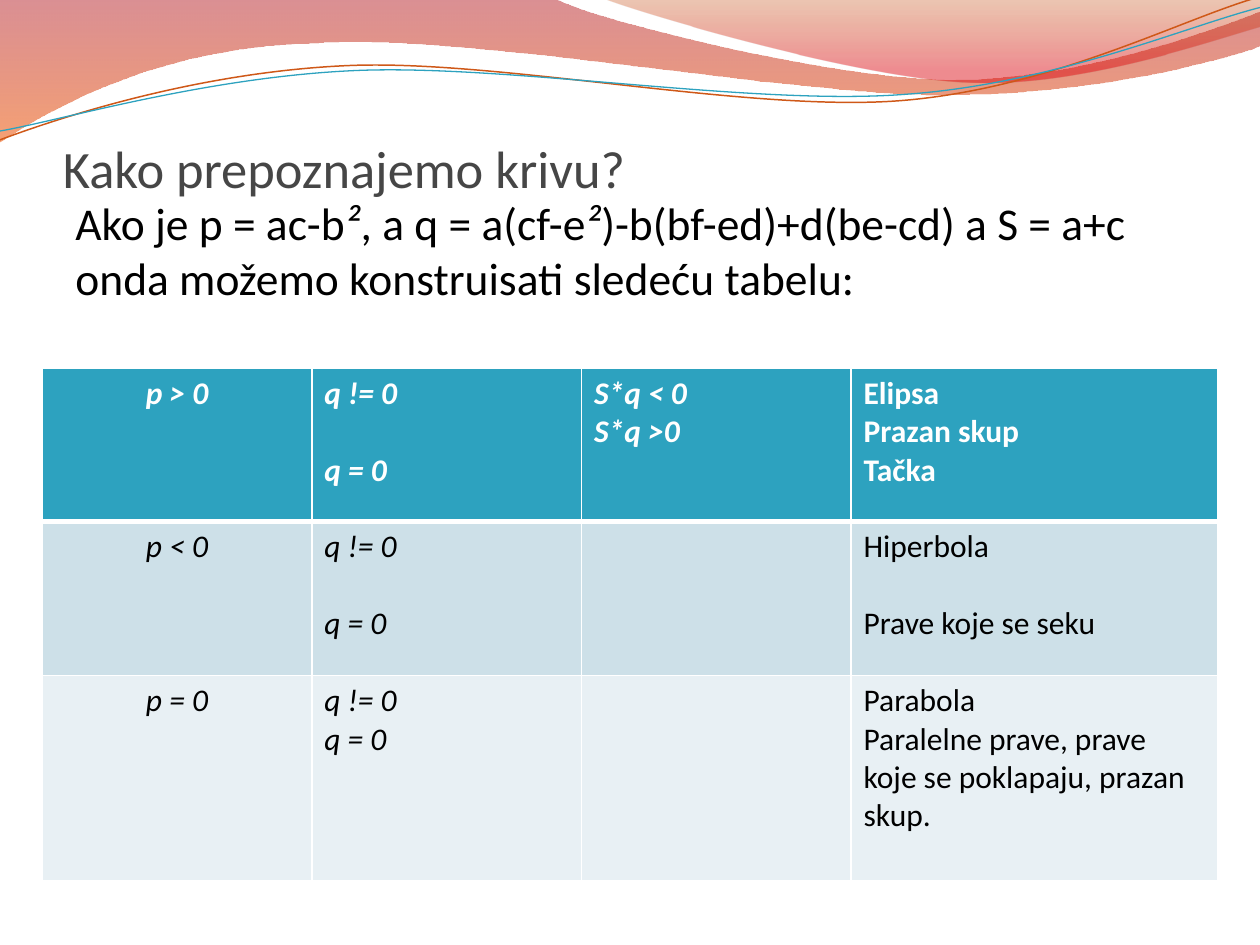
import math
import pptx
import pptx.util
import pptx.dml.color
import pptx.enum.text
import pptx.oxml
import pptx.oxml.ns
from dataclasses import dataclass

Inches, Pt = pptx.util.Inches, pptx.util.Pt
ALIGN = pptx.enum.text.PP_ALIGN
ANCHOR = pptx.enum.text.MSO_ANCHOR
qn, nsdecls = pptx.oxml.ns.qn, pptx.oxml.ns.nsdecls


@dataclass(frozen=True)
class Theme:
    font: str = "Calibri"
    title_size: int = 30
    body_size: int = 26
    table_size: int = 18
    title: str = "464646"
    text: str = "000000"
    white: str = "FFFFFF"
    accent: str = "2DA2BF"
    orange: str = "CF5818"
    bands: tuple = ("CDE0E8", "E8F0F4")
    # Gradient stops: position, colour, opacity in percent
    wide_wave: tuple = ((0, "AF0911", 45), (1, "EE5300", 55))
    right_wave: tuple = ((0, "C24400", 30), (0.8, "DC000B", 45))


T = Theme()

# Wave outlines in inches: a pair is a straight step, six numbers a Bezier curve
WIDE_WAVE = [(0, 0), (4.4, -0.01), (4.76, 0.17, 6.64, 0.63, 7.58, 0.63),
             (8.53, 0.63, 9.58, 0.26, 10, 0.09), (10.01, 0.36),
             (9.83, 0.44, 8.7, 0.76, 7.46, 0.75), (6.22, 0.75, 3.82, 0.28, 2.57, 0.34),
             (1.29, 0.36, 0.46, 0.83, -0.01, 1.13)]
RIGHT_WAVE = [(4.79, -0.01), (5.09, 0.11, 6.82, 0.62, 7.69, 0.65),
              (8.56, 0.69, 9.61, 0.32, 10, 0.21), (10, 0)]
ORANGE_LINE = [(0, 1.11), (0.48, 0.93, 1.58, 0.57, 2.77, 0.52),
               (3.95, 0.47, 5.93, 0.89, 7.13, 0.8), (8.33, 0.71, 9.38, 0.15, 9.98, -0.02)]
BLUE_LINE = [(0, 1.04), (0.47, 0.96, 1.64, 0.61, 2.83, 0.56),
             (4.03, 0.51, 5.97, 0.84, 7.17, 0.75), (8.36, 0.67, 9.41, 0.21, 10, 0.06)]
LINE_TILT = 357.3

# Each cell is a list of lines; None leaves one line of space
ROWS = [
    [["p > 0"], ["q != 0", None, "q = 0"], ["S*q < 0", "S*q >0"],
     ["Elipsa", "Prazan skup", "Tačka"]],
    [["p < 0"], ["q != 0", None, "q = 0"], [],
     ["Hiperbola", None, "Prave koje se seku"]],
    [["p = 0"], ["q != 0", "q = 0"], [],
     ["Parabola", "Paralelne prave, prave koje se poklapaju, prazan skup."]],
]


def rgb(value):
    return pptx.dml.color.RGBColor.from_string(value)


def style(r, size, color, bold=False, italic=False):
    f = r.font
    f.name, f.size, f.bold, f.italic = T.font, Pt(size), bold, italic
    f.color.rgb = rgb(color)


def turn(points, degrees, center):
    """Turn points clockwise about a center."""
    a, (cx, cy) = math.radians(degrees), center
    return [(cx + (x - cx) * math.cos(a) - (y - cy) * math.sin(a),
             cy + (x - cx) * math.sin(a) + (y - cy) * math.cos(a)) for x, y in points]


def add_outline(s, steps, left, top, close, tilt=0, center=(0, 0)):
    points = [pair for step in steps for pair in zip(step[::2], step[1::2])]
    points = [(left + Inches(x), top + Inches(y)) for x, y in turn(points, -tilt, center)]
    builder = s.shapes.build_freeform(*points[0], scale=1.0)
    builder.add_line_segments(points[1:], close=close)
    sp = builder.convert_to_shape()
    sp.rotation = tilt
    sp.shadow.inherit = False
    # Join each three points of a curve into one Bezier segment
    segments = iter(sp._element.spPr.findall(".//" + qn("a:lnTo")))
    for step in steps[1:]:
        first = next(segments)
        if len(step) == 6:
            curve = pptx.oxml.parse_xml(f'<a:cubicBezTo {nsdecls("a")}/>')
            first.addprevious(curve)
            for node in (first, next(segments), next(segments)):
                curve.append(node[0])
                node.getparent().remove(node)
    return sp


def add_waves(s, left, top):
    # Translucent bands
    for steps, stops in ((WIDE_WAVE, T.wide_wave), (RIGHT_WAVE, T.right_wave)):
        sp = add_outline(s, steps, left, top, True)
        sp.line.fill.background()
        sp.fill.gradient()
        sp.fill.gradient_angle = 270
        for stop, (position, color, opacity) in zip(sp.fill.gradient_stops, stops):
            stop.position = position
            stop.color.rgb = rgb(color)
        colors = sp._element.spPr.findall(".//" + qn("a:srgbClr"))
        for node, (position, color, opacity) in zip(colors, stops):
            node.append(pptx.oxml.parse_xml(
                f'<a:alpha {nsdecls("a")} val="{opacity * 1000}"/>'))
    # Thin tilted lines
    for steps, color, width, center in ((ORANGE_LINE, T.orange, 0.85, (4.99, 0.58)),
                                        (BLUE_LINE, T.accent, 0.75, (5, 0.59))):
        sp = add_outline(s, steps, left, top, False, LINE_TILT, center)
        sp.fill.background()
        sp.line.color.rgb = rgb(color)
        sp.line.width = Pt(width)


def add_title(s, left, top, width, height):
    tf = s.shapes.add_textbox(left, top, width, height).text_frame
    tf.word_wrap = True
    tf.vertical_anchor = ANCHOR.BOTTOM
    tf.margin_left = tf.margin_right = tf.margin_bottom = 0
    tf.text = "Kako prepoznajemo krivu?"
    style(tf.paragraphs[0].runs[0], T.title_size, T.title)


def add_body(s, left, top, width, height):
    tf = s.shapes.add_textbox(left, top, width, height).text_frame
    tf.word_wrap = True
    p = tf.paragraphs[0]
    for text in ("Ako je p = ac-b", "²", ", a q = a(cf-e", "²",
                 ")-b(bf-ed)+d(be-cd) a S = a+c onda možemo konstruisati sledeću tabelu:"):
        r = p.add_run()
        r.text = text
        style(r, T.body_size, T.text, italic=text == "²")


def set_borders(cell, bottom):
    tc_pr = cell._tc.get_or_add_tcPr()
    for side, width in (("L", 1), ("R", 1), ("T", 1), ("B", bottom)):
        tc_pr.append(pptx.oxml.parse_xml(
            f'<a:ln{side} {nsdecls("a")} w="{Pt(width)}"><a:solidFill>'
            f'<a:srgbClr val="{T.white}"/></a:solidFill></a:ln{side}>'))


def fill_cell(cell, lines, header, first, italic):
    tf = cell.text_frame
    tf.text = "\n".join(line for line in lines if line)
    shown = [i for i, line in enumerate(lines) if line]
    for p, i in zip(tf.paragraphs, shown):
        p.alignment = ALIGN.CENTER if first else ALIGN.LEFT
        if i and lines[i - 1] is None:
            p.space_before = Pt(T.table_size * 1.22)
        for r in p.runs:
            style(r, T.table_size, T.white if header else T.text, header, italic)


def add_conic_table(s, left, top, width):
    narrow = Inches(2.14)
    widths = [narrow] * 3 + [width - 3 * narrow]
    heights = [Inches(1.22), Inches(1.22), Inches(1.63)]
    table = s.shapes.add_table(len(ROWS), len(widths), left, top, width, sum(heights)).table
    for column, w in zip(table.columns, widths):
        column.width = w
    for i, (row, height) in enumerate(zip(ROWS, heights)):
        table.rows[i].height = height
        for j, lines in enumerate(row):
            cell = table.cell(i, j)
            set_borders(cell, 3 if i == 0 else 1)
            cell.fill.solid()
            cell.fill.fore_color.rgb = rgb((T.accent, *T.bands)[i])
            fill_cell(cell, lines, i == 0, j == 0, j < 3)


def main():
    prs = pptx.Presentation()
    prs.slide_width, prs.slide_height = Inches(10), Inches(7.5)
    s = prs.slides.add_slide(prs.slide_layouts[6])
    add_waves(s, 0, 0)
    add_title(s, Inches(0.5), Inches(0.77), Inches(7.17), Inches(0.81))
    add_body(s, Inches(0.5), Inches(1.5), Inches(9), Inches(5.42))
    table_width = Inches(9.33)
    add_conic_table(s, (prs.slide_width - table_width) // 2, Inches(2.92), table_width)
    prs.save("out.pptx")


if __name__ == "__main__":
    main()
